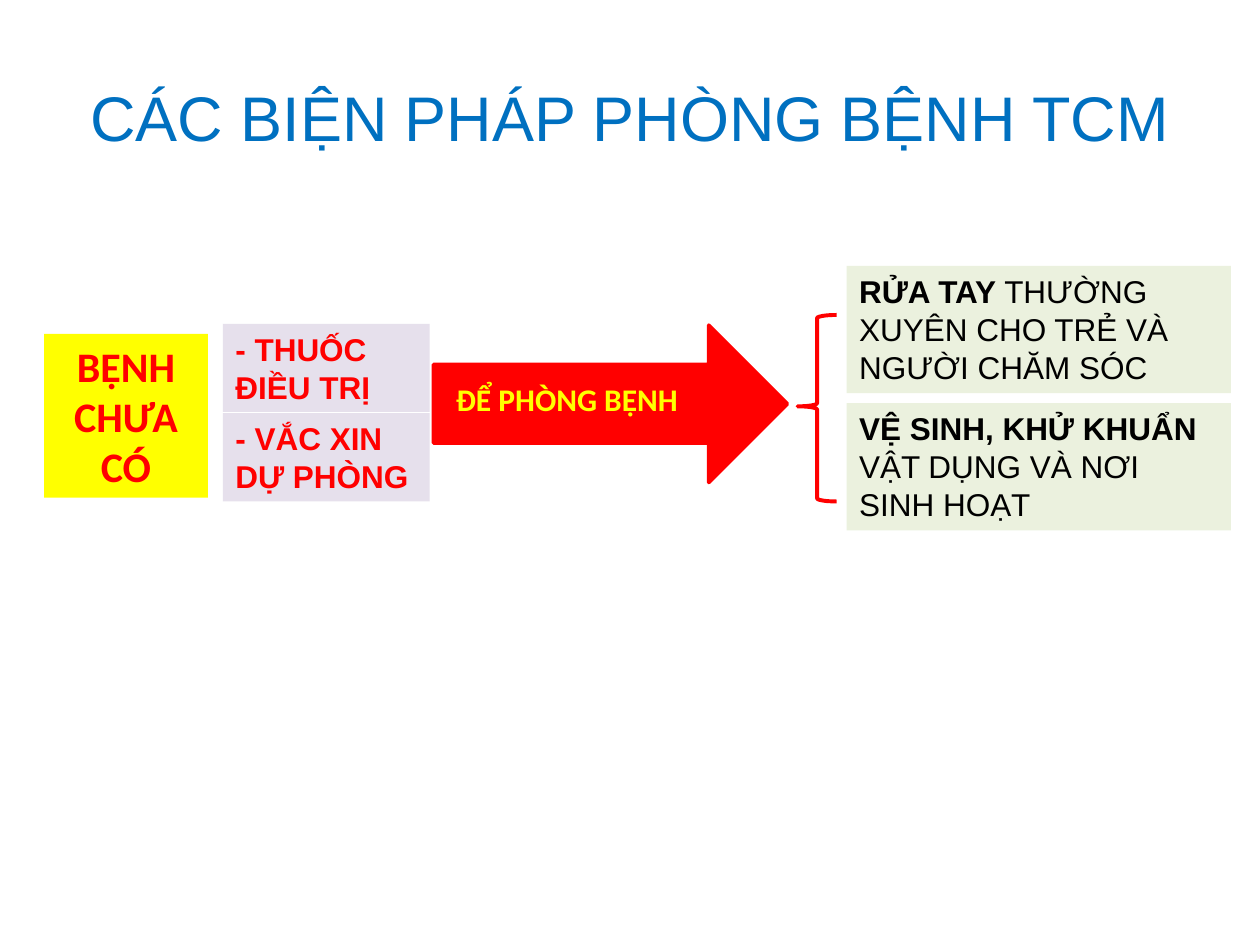
from pptx import Presentation
from pptx.dml.color import RGBColor
from pptx.enum.shapes import MSO_SHAPE as Shape
from pptx.enum.text import MSO_ANCHOR as Anchor, MSO_AUTO_SIZE as AutoSize, PP_ALIGN as Align
from pptx.util import Inches, Pt

BLUE = RGBColor(0x00, 0x70, 0xC0)
RED = RGBColor(0xFF, 0x00, 0x00)
YELLOW = RGBColor(0xFF, 0xFF, 0x00)
LAVENDER = RGBColor(0xE6, 0xE0, 0xEC)
SAGE = RGBColor(0xEB, 0xF1, 0xDE)
BLACK = RGBColor(0x00, 0x00, 0x00)

MISSING = ["- THUỐC ĐIỀU TRỊ", "- VẮC XIN DỰ PHÒNG"]
MEASURES = [
    ("RỬA TAY ", "THƯỜNG XUYÊN CHO TRẺ VÀ NGƯỜI CHĂM SÓC"),
    ("VỆ SINH, KHỬ KHUẨN ", "VẬT DỤNG VÀ NƠI SINH HOẠT"),
]


def inches(box):
    return [Inches(length) for length in box]


def style(run, size, color, font="Arial", bold=False):
    run.font.size = Pt(size)
    run.font.name = font
    run.font.bold = bold
    run.font.color.rgb = color


def add_panel(slide, box, fill=None):
    panel = slide.shapes.add_textbox(*inches(box))
    if fill is not None:
        panel.fill.solid()
        panel.fill.fore_color.rgb = fill
    panel.text_frame.word_wrap = True
    panel.text_frame.auto_size = AutoSize.SHAPE_TO_FIT_TEXT
    return panel.text_frame


def add_outlined(slide, kind, box, width):
    outlined = slide.shapes.add_shape(kind, *inches(box))
    outlined.shadow.inherit = False
    outlined.line.color.rgb = RED
    outlined.line.width = Pt(width)
    return outlined


def stack(box, count, gap):
    left, top, width, height = box
    row = (height - gap * (count - 1)) / count
    return [(left, top + i * (row + gap), width, row) for i in range(count)]


def place_title(slide, box):
    title = slide.shapes.title
    title.left, title.top, title.width, title.height = inches(box)
    title.text_frame.text = "CÁC BIỆN PHÁP PHÒNG BỆNH TCM"
    title.text_frame.vertical_anchor = Anchor.MIDDLE
    heading = title.text_frame.paragraphs[0]
    heading.alignment = Align.CENTER
    style(heading.runs[0], 36, BLUE)


def place_disease(slide, box):
    disease = add_panel(slide, box, YELLOW)
    disease.text = "BỆNH CHƯA\nCÓ"
    for line in disease.paragraphs:
        line.alignment = Align.CENTER
        style(line.runs[0], 24, RED, "Calibri", True)


def place_missing(slide, box):
    for item, cell in zip(MISSING, stack(box, len(MISSING), 0.01)):
        remedy = add_panel(slide, cell, LAVENDER)
        remedy.text = item
        style(remedy.paragraphs[0].runs[0], 18, RED, bold=True)


def place_arrow(slide, box):
    left, top, width, height = box
    arrow = add_outlined(slide, Shape.RIGHT_ARROW, box, 2)
    arrow.fill.solid()
    arrow.fill.fore_color.rgb = RED
    purpose = add_panel(slide, (left + 0.08, top + 0.39, width * 5 / 6, 0.4))
    purpose.text = "ĐỂ PHÒNG BỆNH"
    style(purpose.paragraphs[0].runs[0], 18, YELLOW, "Calibri", True)


def place_measures(slide, box):
    left, top, width, height = box
    panel_left = left + 0.39
    cells = stack((panel_left, top, left + width - panel_left, height), len(MEASURES), 0.08)
    for (action, detail), cell in zip(MEASURES, cells):
        measure = add_panel(slide, cell, SAGE).paragraphs[0]
        for words, bold in ((action, True), (detail, False)):
            run = measure.add_run()
            run.text = words
            style(run, 18, BLACK, bold=bold)
    brace = add_outlined(slide, Shape.LEFT_BRACE, (left, top + 0.39, 0.31, 1.48), 2.25)
    brace.adjustments[0], brace.adjustments[1] = 0.08, 0.49
    brace.fill.background()


def main():
    deck = Presentation()
    deck.slide_width, deck.slide_height = Inches(10), Inches(7.5)
    slide = deck.slides.add_slide(deck.slide_layouts[5])
    place_title(slide, (0.5, 0.3, 9, 1.25))
    place_disease(slide, (0.35, 2.65, 1.3, 1.3))
    place_missing(slide, (1.77, 2.57, 1.64, 1.41))
    place_arrow(slide, (3.44, 2.58, 2.81, 1.25))
    place_measures(slide, (6.33, 2.11, 3.44, 2.1))
    deck.save("out.pptx")


if __name__ == "__main__":
    main()
